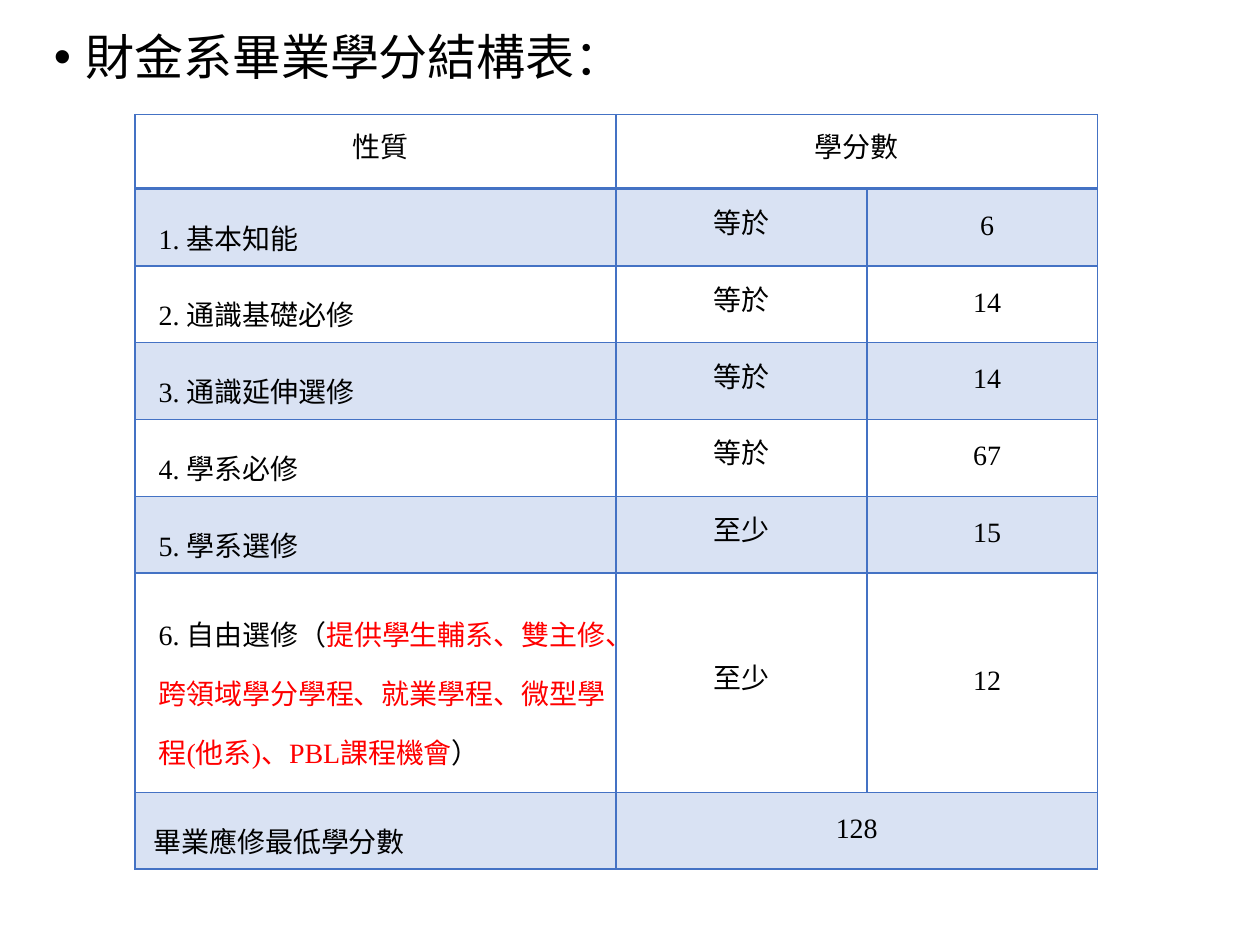
from lxml import etree
from pptx import Presentation
from pptx.dml.color import RGBColor
from pptx.enum.text import MSO_ANCHOR, PP_ALIGN
from pptx.oxml.ns import qn
from pptx.util import Inches, Pt

LEFT, CENTER = PP_ALIGN.LEFT, PP_ALIGN.CENTER
MIDDLE = MSO_ANCHOR.MIDDLE
FONT = "Times New Roman"
BLACK, RED, BLUE = "000000", "FF0000", "4472C4"
TITLE = "財金系畢業學分結構表："
COLUMN_WIDTHS = [3.82, 1.99, 1.83]
ROW_HEIGHTS = [0.59] + [0.61] * 5 + [1.74, 0.61]
ELECTIVES = "提供學生輔系、雙主修、跨領域學分學程、就業學程、微型學程(他系)、PBL課程機會"
ROWS = [
    ([("性質", BLACK)], "學分數", None),
    ([("1. 基本知能", BLACK)], "等於", "6"),
    ([("2. 通識基礎必修", BLACK)], "等於", "14"),
    ([("3. 通識延伸選修", BLACK)], "等於", "14"),
    ([("4. 學系必修", BLACK)], "等於", "67"),
    ([("5. 學系選修", BLACK)], "至少", "15"),
    ([("6. 自由選修（", BLACK), (ELECTIVES, RED), ("）", BLACK)], "至少", "12"),
    ([("畢業應修最低學分數", BLACK)], "128", None),
]


def color(value):
    return RGBColor.from_string(value)


def set_values(target, values):
    for name, value in values.items():
        setattr(target, name, value)


def add_spans(para, spans, size):
    for text, shade in spans:
        span = para.add_run()
        span.text = text
        set_values(span.font, {"name": FONT, "size": Pt(size), "bold": False})
        span.font.color.rgb = color(shade)


def set_indent(para, margin, indent=0):
    properties = para._p.get_or_add_pPr()
    properties.set("marL", str(Inches(margin)))
    properties.set("indent", str(Inches(indent)))
    return properties


def set_border(cell, side, width):
    line = etree.SubElement(cell._tc.get_or_add_tcPr(), qn(f"a:ln{side}"), w=str(Pt(width)))
    fill = etree.SubElement(line, qn("a:solidFill"))
    etree.SubElement(fill, qn("a:srgbClr"), val=BLUE)


def set_fill(cell, shaded):
    if not shaded:
        cell.fill.background()
        return
    cell.fill.solid()
    cell.fill.fore_color.rgb = color(BLUE)
    shade = cell._tc.tcPr.find(".//" + qn("a:solidFill") + "/" + qn("a:srgbClr"))
    for candidate in cell._tc.tcPr.findall(qn("a:solidFill")):
        shade = candidate.find(qn("a:srgbClr"))
    etree.SubElement(shade, qn("a:alpha"), val="20000")


def add_heading(page, left, top, width, height):
    box = page.shapes.add_textbox(Inches(left), Inches(top), Inches(width), Inches(height))
    box.text_frame.word_wrap = True
    para = box.text_frame.paragraphs[0]
    properties = set_indent(para, 0.25, -0.25)
    etree.SubElement(properties, qn("a:buFont"), typeface="Arial")
    etree.SubElement(properties, qn("a:buChar"), char="•")
    para.line_spacing = Pt(34)
    add_spans(para, [(TITLE, BLACK)], 28)


def fill_cell(cell, spans, align, spacing, margin):
    set_values(cell, {
        "vertical_anchor": MIDDLE,
        "margin_left": Inches(0.07),
        "margin_right": Inches(0.07),
        "margin_top": 0,
        "margin_bottom": 0,
    })
    para = cell.text_frame.paragraphs[0]
    set_indent(para, margin)
    set_values(para, {"alignment": align, "line_spacing": Pt(spacing)})
    add_spans(para, spans, 16)


def add_credit_table(page, left, top, width, height):
    frame = page.shapes.add_table(len(ROWS), len(COLUMN_WIDTHS), Inches(left), Inches(top),
                                  Inches(width), Inches(height))
    table = frame.table
    set_values(table, {"first_row": False, "horz_banding": False})
    for column, size in zip(table.columns, COLUMN_WIDTHS):
        column.width = Inches(size)
    for row, size in zip(table.rows, ROW_HEIGHTS):
        row.height = Inches(size)

    last = len(ROWS) - 1
    for index, (label, rule, credits) in enumerate(ROWS):
        cells = [table.cell(index, column) for column in range(len(COLUMN_WIDTHS))]
        for cell in cells:
            for side in "LRTB":
                heavy = (index, side) in ((0, "B"), (1, "T"))
                set_border(cell, side, 2 if heavy else 1)
            set_fill(cell, index % 2 == 1)
        align, spacing = (CENTER, 16) if index == 0 else (LEFT, 34)
        margin = 0.08 if index in (0, last) else 0.12
        fill_cell(cells[0], label, align, spacing, margin)
        fill_cell(cells[1], [(rule, BLACK)], CENTER, 16, 0)
        if credits is None:
            cells[1].merge(cells[2])
        else:
            fill_cell(cells[2], [(credits, BLACK)], CENTER, 16, 0.08)


def main():
    deck = Presentation()
    set_values(deck, {"slide_width": Inches(10), "slide_height": Inches(7.5)})
    page = deck.slides.add_slide(deck.slide_layouts[6])
    add_heading(page, 0.33, 0.16, 9.5, 6.72)
    add_credit_table(page, 1.07, 0.91, sum(COLUMN_WIDTHS), sum(ROW_HEIGHTS))
    deck.save("out.pptx")


if __name__ == "__main__":
    main()
